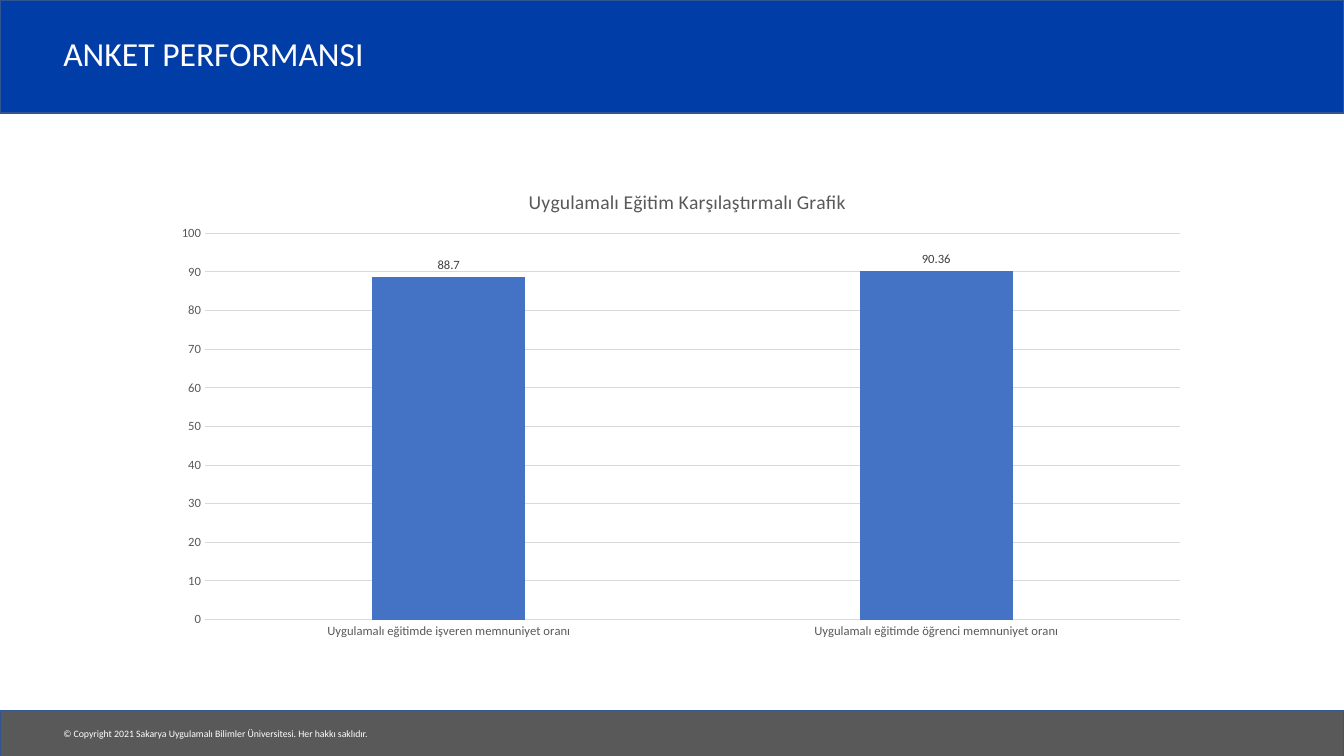
"""Build the survey performance slide with its satisfaction chart."""
from pptx import Presentation
from pptx.chart.data import CategoryChartData
from pptx.dml.color import RGBColor
from pptx.enum import chart as ch, shapes, text
from pptx.oxml import parse_xml
from pptx.oxml.ns import nsdecls, qn
from pptx.util import Inches, Pt

COLORS = {"header": "003DA6", "footer": "595959", "border": "325491",
          "white": "FFFFFF", "grey": "595959", "grid": "D9D9D9",
          "bar": "4472C4", "label": "404040"}
FONT = "Calibri"
SATISFACTION = {"Uygulamalı eğitimde işveren memnuniyet oranı": 88.7,
                "Uygulamalı eğitimde öğrenci memnuniyet oranı": 90.36}


def rgb(name):
    return RGBColor.from_string(COLORS[name])


def set_attrs(obj, **values):
    for name, value in values.items():
        setattr(obj, name, value)


def set_font(font, size, color):
    set_attrs(font, name=FONT, size=Pt(size), bold=False)
    font.color.rgb = rgb(color)


def set_line(line, color, width):
    line.color.rgb = rgb(color)
    line.width = Pt(width)


def add_band(s, top, height, color):
    band = s.shapes.add_shape(shapes.MSO_SHAPE.RECTANGLE, 0, Inches(top),
                              Inches(13.33), Inches(height))
    band.shadow.inherit = False
    band.fill.solid()
    band.fill.fore_color.rgb = rgb(color)
    set_line(band.line, "border", 1)


def add_text(s, box, words, size, **frame):
    tf = s.shapes.add_textbox(*map(Inches, box)).text_frame
    set_attrs(tf, **frame)
    p = tf.paragraphs[0]
    r = p.add_run()
    r.text = words
    set_font(r.font, size, "white")
    return p


def place(parent, index, **fractions):
    """Pin a chart part at fractions of the chart's width and height."""
    for old in parent.findall(qn("c:layout")):
        parent.remove(old)
    modes = "".join(f'<c:{k}Mode val="edge"/>' for k in "xy")
    sizes = "".join(f'<c:{k} val="{v}"/>' for k, v in fractions.items())
    target = '<c:layoutTarget val="inner"/>' if "w" in fractions else ""
    parent.insert(index, parse_xml(
        f'<c:layout {nsdecls("c")}><c:manualLayout>{target}{modes}{sizes}'
        "</c:manualLayout></c:layout>"))


def style_axis(axis):
    set_attrs(axis, major_tick_mark=ch.XL_TICK_MARK.NONE,
              minor_tick_mark=ch.XL_TICK_MARK.NONE)
    set_font(axis.tick_labels.font, 9, "grey")


def style_title(chart, words):
    title = chart.chart_title
    r = title.text_frame.paragraphs[0].add_run()
    r.text = words
    set_font(r.font, 14, "grey")
    title.include_in_layout = False
    place(title._element, 1, x=0.35, y=0.04)


def add_satisfaction_chart(s, box):
    data = CategoryChartData()
    data.categories = list(SATISFACTION)
    data.add_series("Series 1", list(SATISFACTION.values()))
    chart = s.shapes.add_chart(ch.XL_CHART_TYPE.COLUMN_CLUSTERED,
                               *map(Inches, box), data).chart
    set_attrs(chart.font, name=FONT, size=Pt(10))
    chart.has_legend = False
    style_title(chart, "Uygulamalı Eğitim Karşılaştırmalı Grafik")

    style_axis(chart.category_axis)
    set_line(chart.category_axis.format.line, "grid", 0.75)
    values = chart.value_axis
    style_axis(values)
    set_attrs(values, minimum_scale=0, maximum_scale=100, major_unit=10,
              has_major_gridlines=True)
    values.format.line.fill.background()
    set_line(values.major_gridlines.format.line, "grid", 0.75)

    plot = chart.plots[0]
    set_attrs(plot, gap_width=219, overlap=-27, vary_by_categories=False)
    series = plot.series[0]
    series.format.fill.solid()
    series.format.fill.fore_color.rgb = rgb("bar")
    labels = series.data_labels
    set_attrs(labels, show_value=True,
              position=ch.XL_LABEL_POSITION.OUTSIDE_END)
    set_font(labels.font, 9, "label")
    plot_area = chart._chartSpace.find(".//" + qn("c:plotArea"))
    place(plot_area, 0, x=0.042, y=0.141, w=0.938, h=0.8)


def main():
    prs = Presentation()
    set_attrs(prs, slide_width=Inches(13.33), slide_height=Inches(7.5))
    s = prs.slides.add_slide(prs.slide_layouts[6])
    add_band(s, 0, 1.12, "header")
    add_band(s, 7.05, 0.46, "footer")
    add_text(s, (0.53, 7.17, 3.29, 0.22),
             "© Copyright 2021 Sakarya Uygulamalı Bilimler Üniversitesi. "
             "Her hakkı saklıdır.", 7, word_wrap=False,
             auto_size=text.MSO_AUTO_SIZE.SHAPE_TO_FIT_TEXT)
    heading = add_text(s, (0.53, 0.19, 11.03, 0.73), "ANKET PERFORMANSI", 24,
                       word_wrap=True,
                       vertical_anchor=text.MSO_ANCHOR.MIDDLE)
    heading.line_spacing = 0.9
    add_satisfaction_chart(s, (1.6, 1.64, 10.31, 4.79))
    prs.save("out.pptx")


if __name__ == "__main__":
    main()
